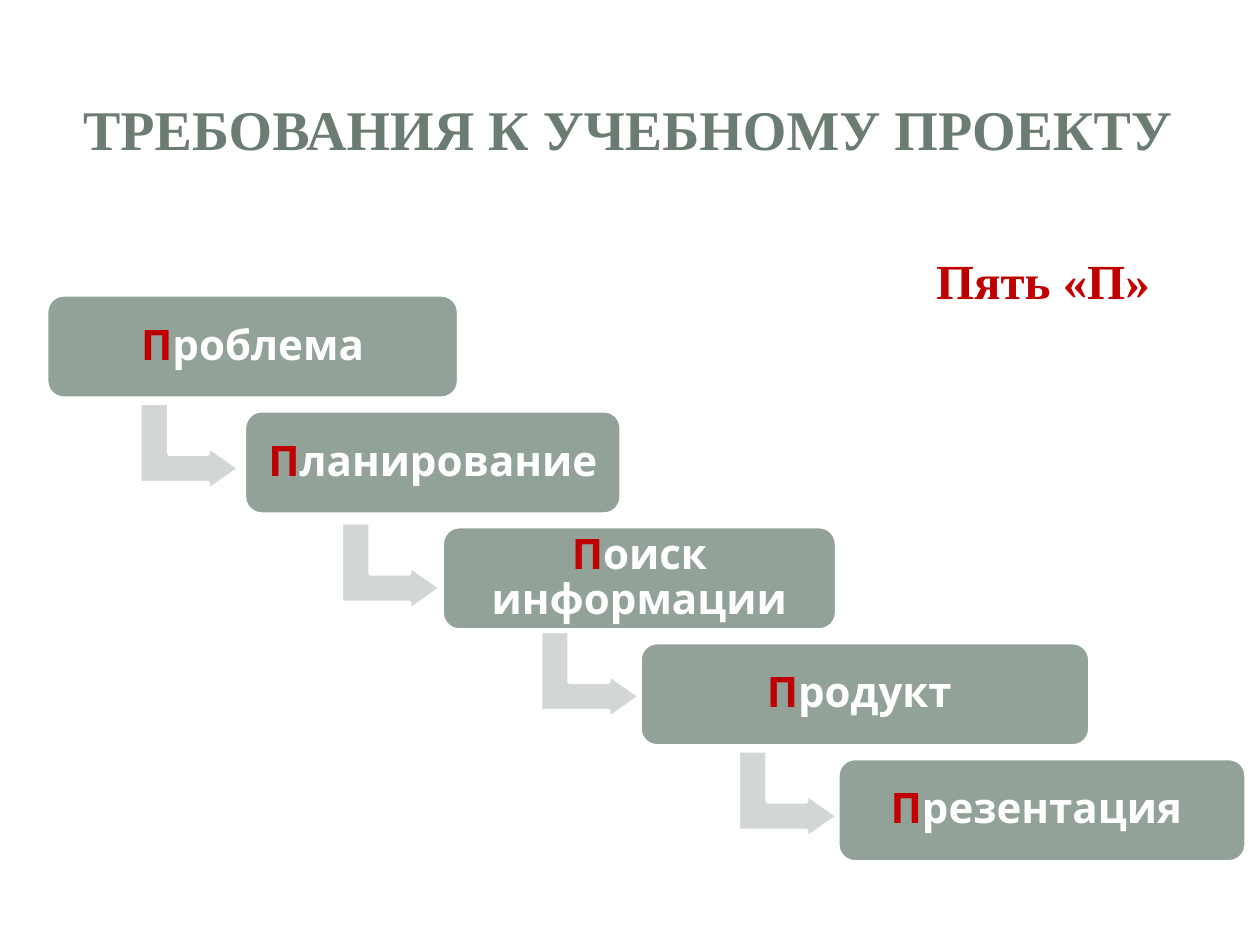
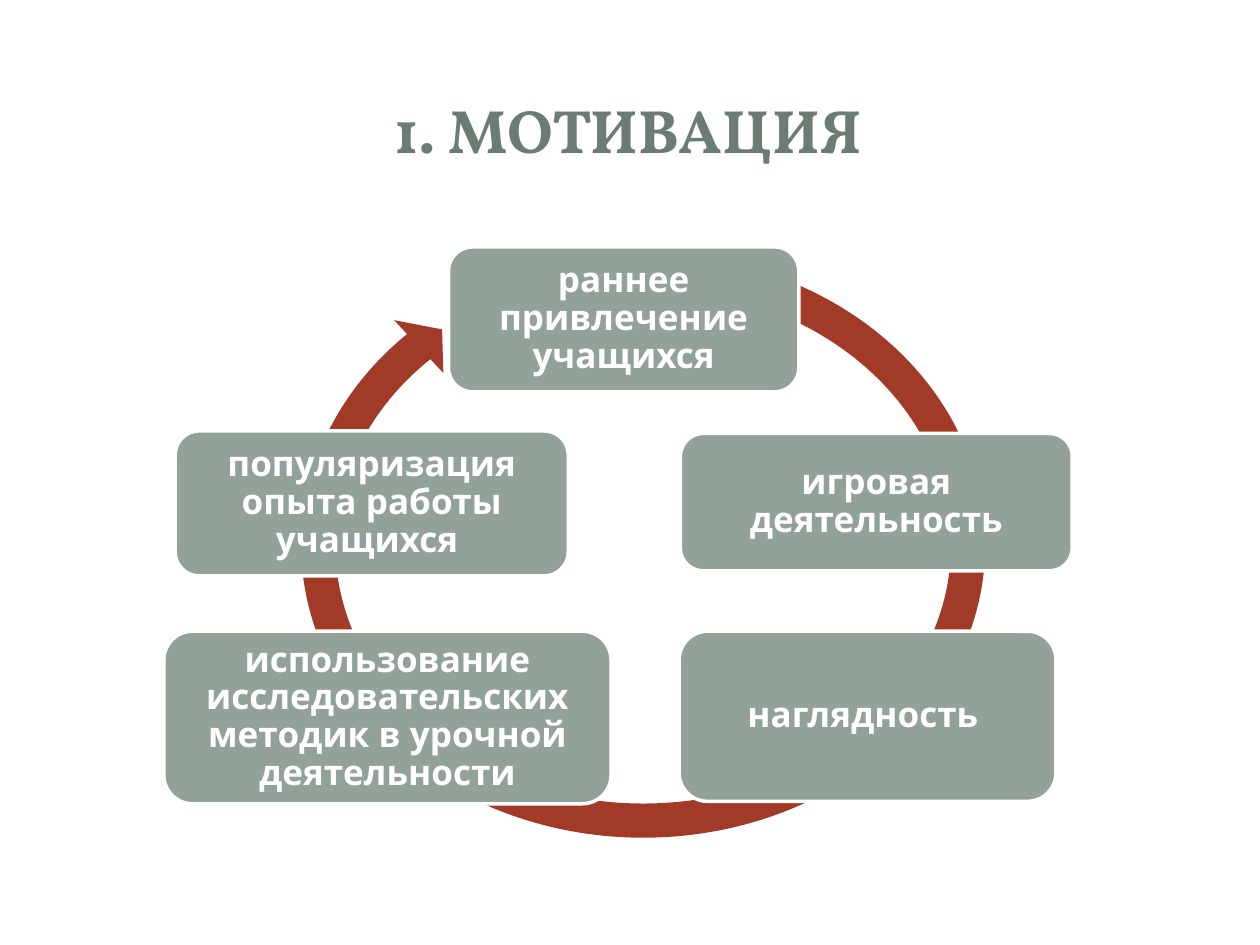
from pptx import Presentation
from pptx.dml.color import RGBColor
from pptx.enum.shapes import MSO_SHAPE
from pptx.enum.text import MSO_ANCHOR, MSO_AUTO_SIZE, PP_ALIGN
from pptx.util import Inches, Pt

COLORS = {
    "title": "6B7D72",
    "box": "93A299",
    "step_arrow": "D2D7D4",
    "cycle_arrow": "A23A28",
    "accent": "C00000",
    "white": "FFFFFF",
}
SERIF = "Times New Roman"
TITLE_FONT = "Vollkorn"
BODY_FONT = "League Spartan"
TITLE_BOX = (0.47, 0.45, 9.03, 1.14)

STAIRS_BOX = (0.37, 2.34, 9.52, 4.5)
STEPS = [
    ("Проблема", 3.27),
    ("Планирование", 2.99),
    ("Поиск информации", 3.13),
    ("Продукт ", 3.57),
    ("Презентация ", 3.24),
]
STEP_ARROWS = [(0.79, 0.81), (2.39, 1.76), (3.97, 2.62), (5.54, 3.57)]

CYCLE_BOX = (1.3, 1.86, 7.21, 4.94)
CYCLE_NODES = [
    ("раннее привлечение учащихся", 2.26, 0.1, 2.78, 1.15),
    ("игровая деятельность", 4.1, 1.58, 3.11, 1.09),
    ("наглядность ", 4.09, 3.15, 2.99, 1.35),
    ("использование исследовательских методик в урочной деятельности",
     0, 3.15, 3.55, 1.37),
    ("популяризация опыта работы учащихся ", 0.09, 1.56, 3.12, 1.15),
]


def color(name):
    return RGBColor.from_string(COLORS[name])


def write_text(shape, text, font=BODY_FONT, size=20, fill="white", lead_fill=None,
               align=PP_ALIGN.CENTER, anchor=MSO_ANCHOR.MIDDLE, spacing=None,
               before=None, margins=(0.1, 0.05, 0.1, 0.05)):
    frame = shape.text_frame
    frame.word_wrap = True
    frame.auto_size = MSO_AUTO_SIZE.NONE
    frame.vertical_anchor = anchor
    (frame.margin_left, frame.margin_top,
     frame.margin_right, frame.margin_bottom) = map(Inches, margins)
    paragraph = frame.paragraphs[0]
    paragraph.alignment = align
    paragraph.line_spacing = spacing
    paragraph.space_before = before
    parts = [(text[0], lead_fill), (text[1:], fill)] if lead_fill else [(text, fill)]
    for part, part_fill in parts:
        run = paragraph.add_run()
        run.text = part
        run.font.name = font
        run.font.size = Pt(size)
        run.font.bold = True
        run.font.color.rgb = color(part_fill)


def add_filled_shape(slide, kind, box, fill, outlined=True):
    shape = slide.shapes.add_shape(kind, *map(Inches, box))
    shape.shadow.inherit = False
    shape.fill.solid()
    shape.fill.fore_color.rgb = color(fill)
    if outlined:
        shape.line.color.rgb = color("white")
        shape.line.width = Pt(2)
    else:
        shape.line.fill.background()
    return shape


def set_adjustments(shape, values):
    for index, value in enumerate(values):
        shape.adjustments[index] = value


def add_label_box(slide, text, box, **text_format):
    shape = add_filled_shape(slide, MSO_SHAPE.ROUNDED_RECTANGLE, box, "box")
    write_text(shape, text, spacing=0.9, margins=(0.14,) * 4, **text_format)


def add_titled_slide(presentation, text, font, size):
    slide = presentation.slides.add_slide(presentation.slide_layouts[5])
    title = slide.shapes.title
    title.left, title.top, title.width, title.height = map(Inches, TITLE_BOX)
    write_text(title, text, font=font, size=size, fill="title")
    return slide


def add_stairs(slide, box):
    left, top, width, height = box
    step_height = 0.82
    step_left = (width - STEPS[-1][1]) / (len(STEPS) - 1)
    step_top = (height - step_height) / (len(STEPS) - 1)
    for arrow_left, arrow_top in STEP_ARROWS:
        arrow = add_filled_shape(slide, MSO_SHAPE.BENT_UP_ARROW,
                                 (left + arrow_left, top + arrow_top, 0.69, 0.79),
                                 "step_arrow")
        arrow.rotation = 90
        set_adjustments(arrow, (0.33, 0.25, 0.36))
    for index, (text, step_width) in enumerate(STEPS):
        add_label_box(slide, text,
                      (left + index * step_left, top + index * step_top,
                       step_width, step_height),
                      size=24, lead_fill="accent")


def add_caption(slide, box):
    caption = slide.shapes.add_textbox(*map(Inches, box))
    write_text(caption, "Пять «П»", font=SERIF, size=28, fill="accent",
               align=PP_ALIGN.LEFT, anchor=MSO_ANCHOR.TOP, before=Pt(4),
               margins=(0.23, 0.05, 0, 0.05))


def add_cycle(slide, box):
    left, top, width, height = box
    arrow = add_filled_shape(slide, MSO_SHAPE.CIRCULAR_ARROW,
                             (left + 0.94, top, 5.73, height),
                             "cycle_arrow", outlined=False)
    set_adjustments(arrow, (0.055, 3.31, 132.93, 176.87, 0.058))
    for text, node_left, node_top, node_width, node_height in CYCLE_NODES:
        add_label_box(slide, text,
                      (left + node_left, top + node_top, node_width, node_height))


def main():
    presentation = Presentation()
    presentation.slide_width = Inches(10)
    presentation.slide_height = Inches(7.5)

    requirements = add_titled_slide(presentation, "ТРЕБОВАНИЯ К УЧЕБНОМУ ПРОЕКТУ",
                                    SERIF, 32)
    add_stairs(requirements, STAIRS_BOX)
    add_caption(requirements, (7.2, 1.94, 2.04, 0.57))

    motivation = add_titled_slide(presentation, "1. МОТИВАЦИЯ", TITLE_FONT, 35)
    add_cycle(motivation, CYCLE_BOX)

    presentation.save("out.pptx")


if __name__ == "__main__":
    main()
